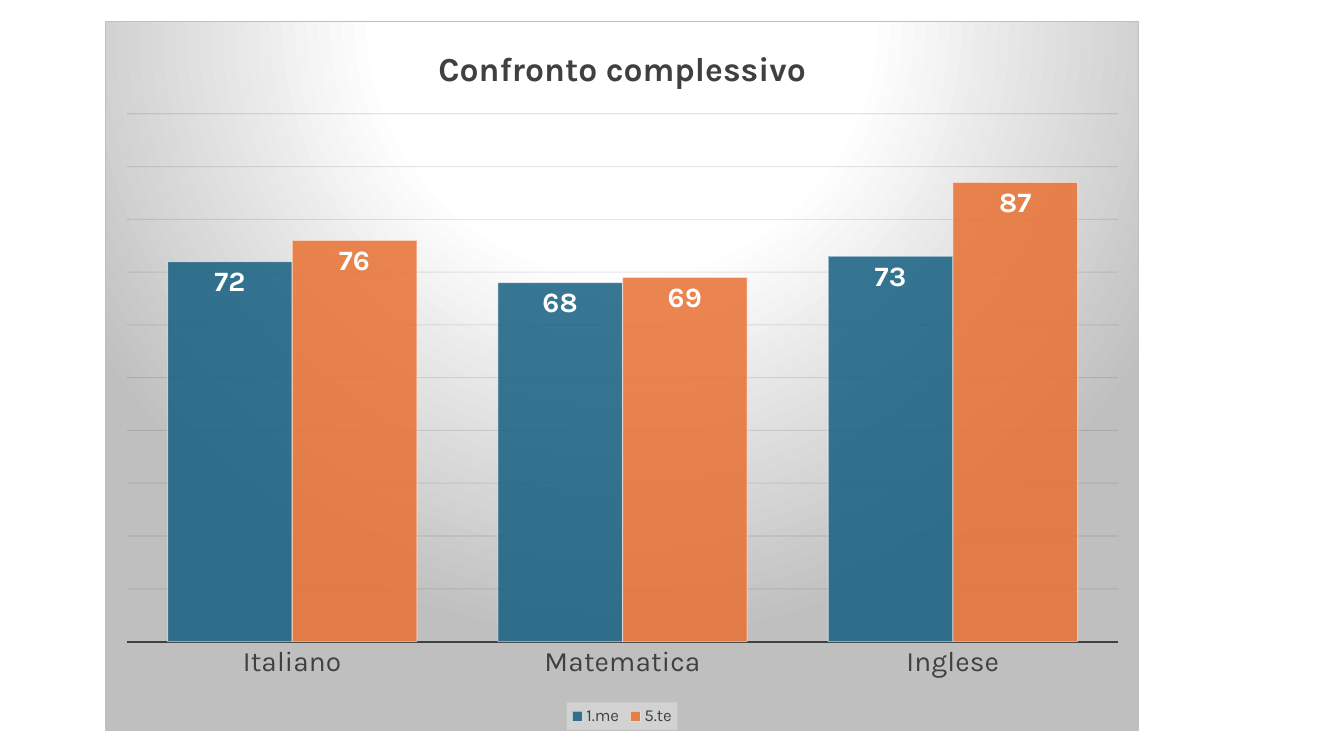
"""Build a slide with one column chart comparing results by subject."""
from pptx import Presentation
from pptx.chart.data import CategoryChartData
from pptx.dml.color import RGBColor
from pptx.enum.chart import XL_CHART_TYPE, XL_LABEL_POSITION, XL_LEGEND_POSITION, XL_TICK_MARK
from pptx.oxml import parse_xml
from pptx.oxml.ns import nsdecls
from pptx.util import Inches, Pt

TITLE = "Confronto complessivo"
SUBJECTS = ["Italiano", "Matematica", "Inglese"]
SERIES = [("1.me", (72, 68, 73), "156082"), ("5.te", (76, 69, 87), "E97132")]
FACE, DARK, WHITE, GREY, GRID = "Karla", "404040", "FFFFFF", "BFBFBF", "0D0D0D"
STOPS = [(0, WHITE), (39, WHITE), (100, GREY)]
GLOW = {"l": 50, "t": -80, "r": 50, "b": 180}
PLOT = {"x": 0.021, "y": 0.13, "w": 0.959, "h": 0.745}
FRAME = (1.04, 0.21, 10.26, 7.04)
WIDE, HIGH = 13.33, 7.5


def hue(code):
    return RGBColor.from_string(code)


def style(font, size, color, bold=False):
    font.name, font.size, font.bold = FACE, Pt(size), bold
    font.color.rgb = hue(color)


def rule(line, color, width):
    line.color.rgb = hue(color)
    line.width = Pt(width)


def fade(chart, query, share):
    for color in chart.element.xpath(query + "/a:solidFill/a:srgbClr"):
        color.append(parse_xml(f'<a:alpha {nsdecls("a")} val="{share * 1000}"/>'))


def backdrop():
    stops = "".join(f'<a:gs pos="{p * 1000}"><a:srgbClr val="{c}"/></a:gs>' for p, c in STOPS)
    sides = " ".join(f'{k}="{v * 1000}"' for k, v in GLOW.items())
    return parse_xml(
        f'<c:spPr {nsdecls("c", "a")}><a:gradFill><a:gsLst>{stops}</a:gsLst>'
        f'<a:path path="circle"><a:fillToRect {sides}/></a:path></a:gradFill>'
        f'<a:ln w="{Pt(0.75)}"><a:solidFill><a:srgbClr val="{GREY}"/></a:solidFill></a:ln></c:spPr>')


def place(area):
    for old in area.xpath("c:layout"):
        area.remove(old)
    spots = "".join(f'<c:{k} val="{v}"/>' for k, v in PLOT.items())
    area.insert(0, parse_xml(
        f'<c:layout {nsdecls("c")}><c:manualLayout><c:layoutTarget val="inner"/>'
        f'<c:xMode val="edge"/><c:yMode val="edge"/>{spots}</c:manualLayout></c:layout>'))


def add_bars(slide):
    data = CategoryChartData(number_format="0")
    data.categories = SUBJECTS
    for name, marks, _ in SERIES:
        data.add_series(name, marks)
    box = [Inches(n) for n in FRAME]
    chart = slide.shapes.add_chart(XL_CHART_TYPE.COLUMN_CLUSTERED, *box, data).chart
    style(chart.font, 10, "000000")
    run = chart.chart_title.text_frame.paragraphs[0].add_run()
    run.text = TITLE
    style(run.font, 24, DARK, True)
    chart.chart_title.include_in_layout = False

    plot = chart.plots[0]
    plot.gap_width, plot.overlap, plot.vary_by_categories = 65, 0, False
    for bars, (_, _, color) in zip(plot.series, SERIES):
        bars.format.fill.solid()
        bars.format.fill.fore_color.rgb = hue(color)
        rule(bars.format.line, WHITE, 0.75)
        labels = bars.data_labels
        labels.show_value = True
        labels.position = XL_LABEL_POSITION.INSIDE_END
        labels.number_format, labels.number_format_is_linked = "0", False
        style(labels.font, 20, WHITE, True)

    base, scale = chart.category_axis, chart.value_axis
    base.major_tick_mark = base.minor_tick_mark = XL_TICK_MARK.NONE
    style(base.tick_labels.font, 20, DARK)
    rule(base.format.line, DARK, 1.5)
    scale.minimum_scale, scale.maximum_scale, scale.major_unit = 0, 100, 10
    scale.has_major_gridlines = True
    rule(scale.major_gridlines.format.line, GRID, 0.75)
    scale.visible = False

    chart.has_legend = True
    chart.legend.position = XL_LEGEND_POSITION.BOTTOM
    chart.legend.include_in_layout = False
    style(chart.legend.font, 12, DARK)
    chart.element.xpath("c:chart/c:legend/c:overlay")[0].addnext(parse_xml(
        f'<c:spPr {nsdecls("c", "a")}><a:solidFill><a:srgbClr val="F2F2F2"/></a:solidFill></c:spPr>'))

    fade(chart, ".//c:ser/c:spPr", 85)
    fade(chart, ".//c:ser/c:spPr/a:ln", 50)
    fade(chart, ".//c:majorGridlines/c:spPr/a:ln", 10)
    fade(chart, ".//c:legend/c:spPr", 39)
    place(chart.element.xpath("c:chart/c:plotArea")[0])
    chart.element.xpath("c:chart")[0].addnext(backdrop())


def main():
    deck = Presentation()
    deck.slide_width, deck.slide_height = Inches(WIDE), Inches(HIGH)
    add_bars(deck.slides.add_slide(deck.slide_layouts[6]))
    deck.save("out.pptx")


if __name__ == "__main__":
    main()
